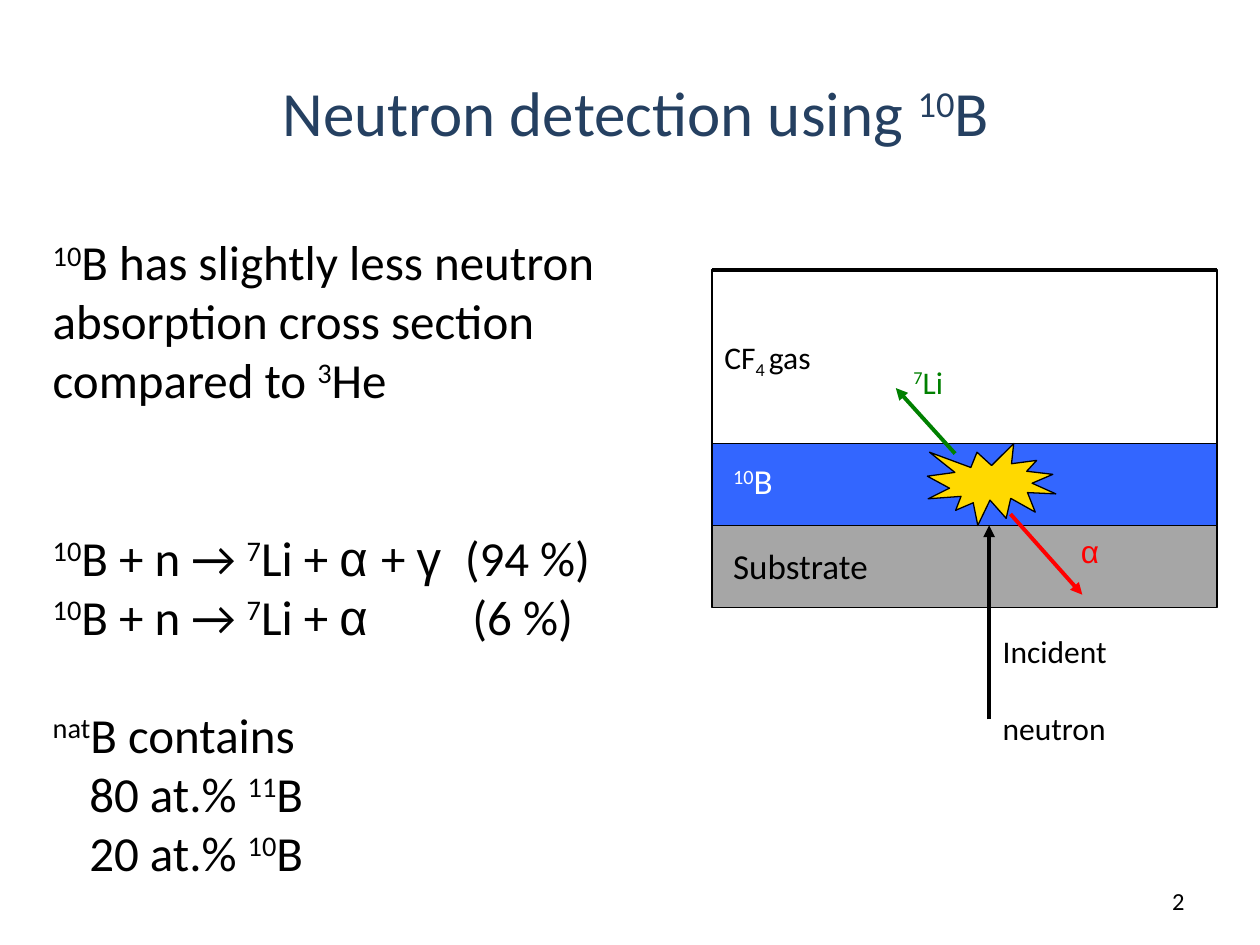
import pptx
import pptx.dml.color
import pptx.enum.shapes
import pptx.enum.text
import pptx.oxml.ns
import pptx.util
from lxml import etree

Inches, Pt = pptx.util.Inches, pptx.util.Pt
RGBColor = pptx.dml.color.RGBColor
Shape = pptx.enum.shapes.MSO_SHAPE
Align = pptx.enum.text.PP_ALIGN
Anchor = pptx.enum.text.MSO_ANCHOR
qn = pptx.oxml.ns.qn

NAVY = RGBColor(0x25, 0x40, 0x61)
BLACK = RGBColor(0, 0, 0)
WHITE = RGBColor(255, 255, 255)
GRAY = RGBColor(0xA6, 0xA6, 0xA6)
BLUE = RGBColor(0x33, 0x66, 0xFF)
YELLOW = RGBColor(0xFF, 0xD9, 0)
RED = RGBColor(255, 0, 0)
GREEN = RGBColor(0, 0x80, 0)

SUPER, SUB = 30000, -25000  # baseline shifts


def add_runs(para, runs, size, color=BLACK):
    """Each run is a string or (text, baseline shift); Greek is set in Arial."""
    for item in runs:
        text, shift = (item, 0) if isinstance(item, str) else item
        span = para.add_run()
        span.text = text
        span.font.name = "Arial" if text.strip() in ("α", "γ") else "Calibri"
        span.font.size = Pt(size)
        span.font.color.rgb = color
        if shift:
            span._r.get_or_add_rPr().set("baseline", str(shift))


def add_text_box(shapes, left, top, width, height, wrap=False):
    box = shapes.add_textbox(Inches(left), Inches(top), Inches(width), Inches(height))
    box.text_frame.word_wrap = wrap
    return box.text_frame


def add_shape(shapes, kind, left, top, width, height, fill=None):
    shape = shapes.add_shape(
        kind, Inches(left), Inches(top), Inches(width), Inches(height))
    shape.shadow.inherit = False
    if fill is None:
        shape.fill.background()
    else:
        shape.fill.solid()
        shape.fill.fore_color.rgb = fill
    shape.line.color.rgb = BLACK
    shape.line.width = Pt(0.75)


def add_line(shapes, start, end, color=BLACK, arrow=True):
    line = shapes.add_connector(
        pptx.enum.shapes.MSO_CONNECTOR.STRAIGHT,
        *(Inches(value) for value in start + end))
    line.line.color.rgb = color
    line.line.width = Pt(2.25)
    properties = line._element.spPr
    if arrow:
        etree.SubElement(properties.find(qn("a:ln")), qn("a:tailEnd"), type="triangle")
    etree.SubElement(properties, qn("a:effectLst"))


def build_title(page, left, top, width, height):
    title = page.shapes.title
    title.left, title.top = Inches(left), Inches(top)
    title.width, title.height = Inches(width), Inches(height)
    title.text_frame.vertical_anchor = Anchor.TOP
    para = title.text_frame.paragraphs[0]
    para.alignment = Align.CENTER
    add_runs(para, ["Neutron detection using ", ("10", SUPER), "B"], 36, NAVY)


def build_body(page, left, top, width, height):
    frame = add_text_box(page.shapes, left, top, width, height, wrap=True)
    reaction = [("10", SUPER), "B + n → ", ("7", SUPER), "Li + ", "α "]
    # (runs, space before in points, indent in inches, tab stop in inches)
    rows = [
        ([("10", SUPER), "B has slightly less neutron absorption cross section "
          "compared to ", ("3", SUPER), "He"], 0, 0, None),
        (reaction + ["+ ", "γ", "\t(94 %)"], 68, 0, 3.27),
        (reaction + ["\t(6 %)"], 0, 0, 3.33),
        ([("nat", SUPER), "B contains"], 34, 0, None),
        (["80 at.% ", ("11", SUPER), "B"], 0, 0.29, None),
        (["20 at.% ", ("10", SUPER), "B"], 0, 0.29, None),
    ]
    for index, (runs, space, indent, stop) in enumerate(rows):
        para = frame.paragraphs[0] if index == 0 else frame.add_paragraph()
        para.space_before = Pt(space)
        properties = para._p.get_or_add_pPr()
        properties.set("marL", str(Inches(indent)))
        if stop:
            tabs = etree.SubElement(properties, qn("a:tabLst"))
            etree.SubElement(tabs, qn("a:tab"), pos=str(Inches(stop)), algn="l")
        add_runs(para, runs, 28)


def build_detector(page, left, top, width):
    shapes = page.shapes.add_group_shape().shapes
    gas_height, layer_height = 1.38, 0.65
    boron_top = top + gas_height
    substrate_top = boron_top + layer_height

    # Layers, with a heavier line along the top
    for layer_top, layer, fill in (
            (substrate_top, layer_height, GRAY),
            (top, gas_height, None),
            (boron_top, layer_height, BLUE)):
        add_shape(shapes, Shape.RECTANGLE, left, layer_top, width, layer, fill)
    add_line(shapes, (left, top), (left + width, top), arrow=False)

    # Incident neutron
    neutron_x = left + 2.2
    add_line(shapes, (neutron_x, substrate_top + 1.54), (neutron_x, substrate_top))
    frame = add_text_box(shapes, neutron_x + 0.01, substrate_top + 0.8, 1.04, 0.73)
    add_runs(frame.paragraphs[0], ["Incident"], 18)
    para = frame.add_paragraph()
    para.space_before = Pt(22)
    add_runs(para, ["neutron"], 18)

    # Labels: offset from the top left corner, size, runs
    for x, y, w, h, runs, size, color in (
            (0, 0.49, 0.92, 0.42, ["CF", ("4 ", SUB), "gas"], 18, BLACK),
            (0.07, 1.46, 0.54, 0.45, [("10", SUPER), "B"], 20, WHITE),
            (1.5, 0.69, 0.45, 0.42, [("7", SUPER), "Li"], 18, GREEN),
            (2.83, 2.03, 0.36, 0.42, ["α"], 18, RED),
            (0.07, 2.13, 1.29, 0.45, ["Substrate"], 20, BLACK)):
        frame = add_text_box(shapes, left + x, top + y, w, h)
        add_runs(frame.paragraphs[0], runs, size, color)

    # Reaction and its products
    add_shape(shapes, Shape.EXPLOSION1, left + 1.71, boron_top, 1.02, layer_height, YELLOW)
    for start, end, color in (
            ((2.37, 1.94), (2.94, 2.58), RED),
            ((1.93, 1.46), (1.46, 0.94), GREEN)):
        add_line(shapes, (left + start[0], top + start[1]),
                 (left + end[0], top + end[1]), color)


def build_page_number(page, left, top, width, height):
    frame = add_text_box(page.shapes, left, top, width, height, wrap=True)
    frame.vertical_anchor = Anchor.MIDDLE
    para = frame.paragraphs[0]
    para.alignment = Align.RIGHT
    add_runs(para, ["2"], 14)


def main():
    deck = pptx.Presentation()
    deck.slide_width, deck.slide_height = Inches(10), Inches(7.5)
    page = deck.slides.add_slide(deck.slide_layouts.get_by_name("Title Only"))
    build_title(page, 0.83, 0.53, 8.43, 1.25)
    build_body(page, 0.32, 1.79, 5.28, 4.97)
    build_page_number(page, 7.17, 6.95, 2.33, 0.4)
    build_detector(page, 5.65, 2.14, 4.01)
    deck.save("out.pptx")


if __name__ == "__main__":
    main()
